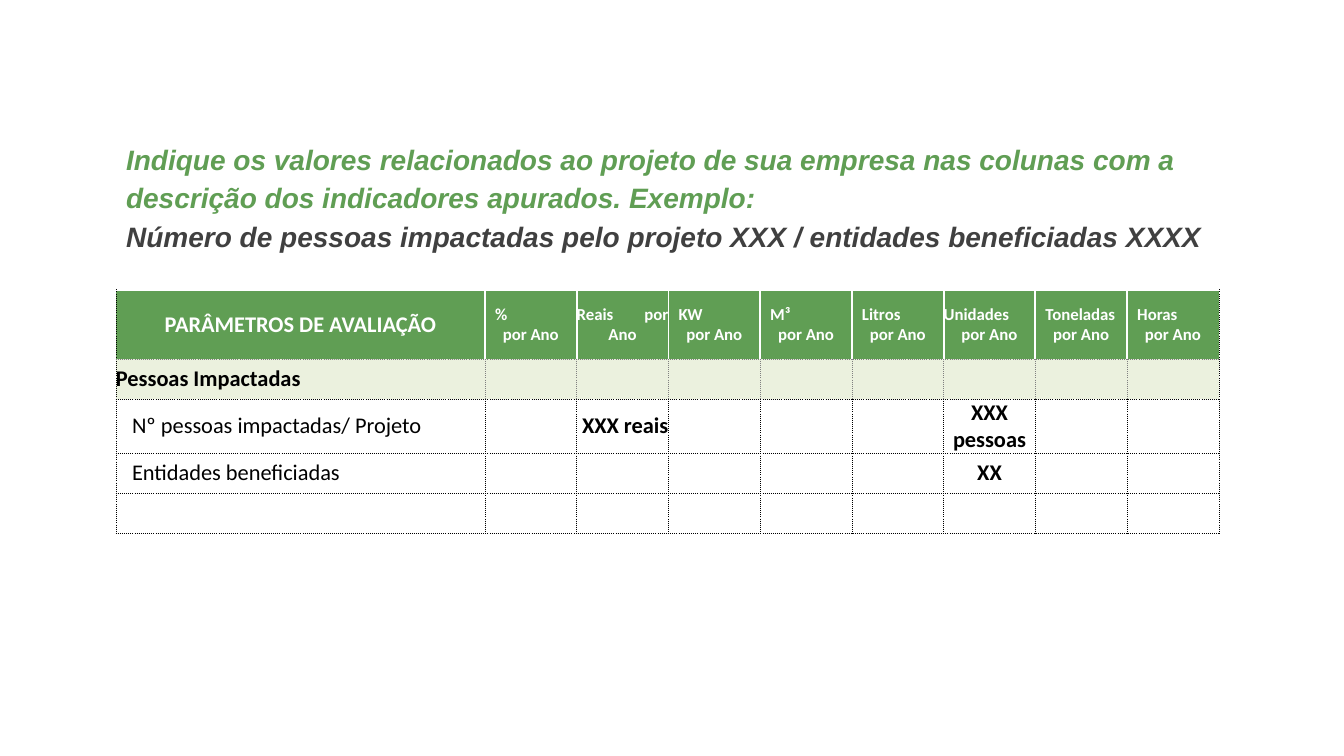
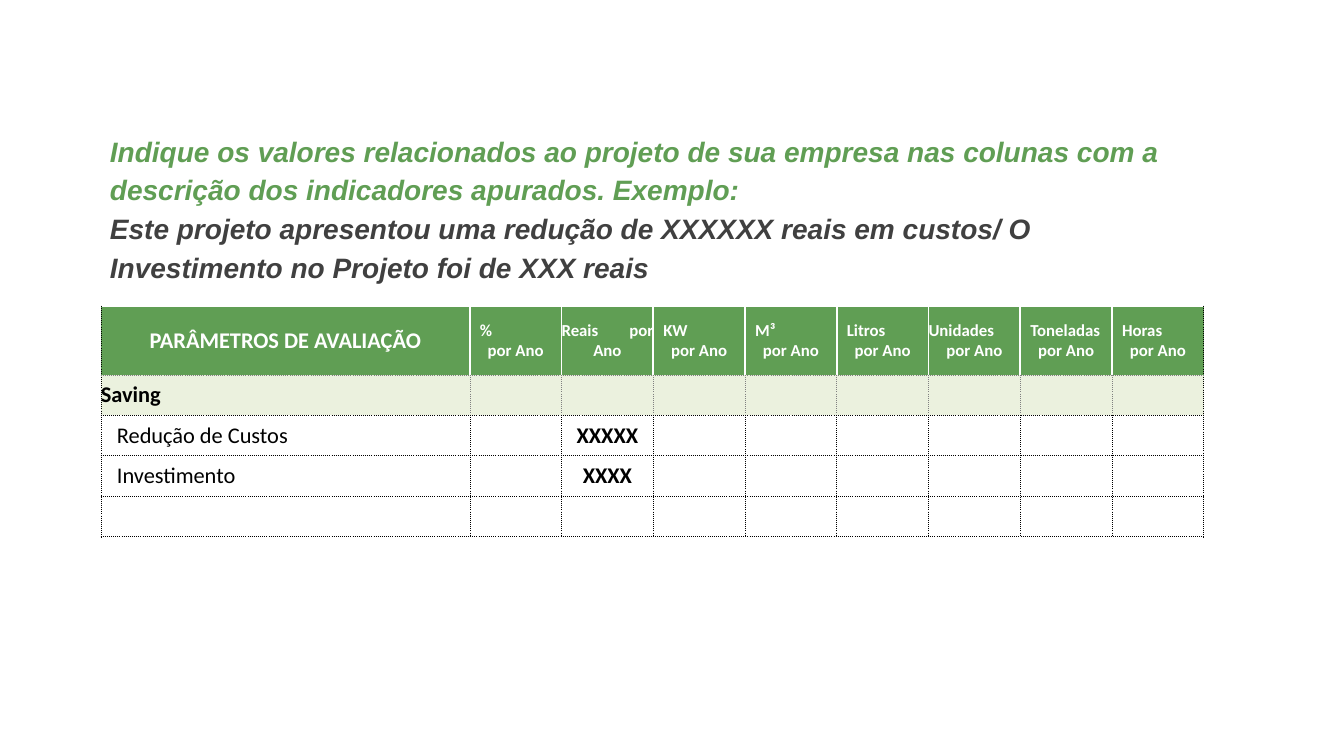
from pptx import Presentation
from pptx.dml.color import RGBColor
from pptx.enum.text import MSO_ANCHOR as Anchor, MSO_AUTO_SIZE as AutoSize, PP_ALIGN as Align
from pptx.oxml import parse_xml
from pptx.oxml.ns import nsdecls
from pptx.util import Inches, Pt

GREEN, PALE, WHITE = "609E54", "EBF1DE", "FFFFFF"
BLACK, GREY, CHARCOAL = "000000", "808080", "404040"

LABEL_WIDTH, UNIT_WIDTH = 3.66, 0.91
HEADER_HEIGHT, ROW_HEIGHT = 0.68, 0.4
UNIT_INDENT, LABEL_INDENT = 0.1, 0.16

PROMPT = ("Indique os valores relacionados ao projeto de sua empresa nas colunas "
          "com a descrição dos indicadores apurados. Exemplo:")
LABEL_HEADING = "PARÂMETROS DE AVALIAÇÃO"
# Unit line, second line, indent of the unit line
UNITS = [
    ("%", "por Ano", UNIT_INDENT),
    ("Reais\tpor", "Ano", 0),
    ("KW", "por Ano", UNIT_INDENT),
    ("M³", "por Ano", UNIT_INDENT),
    ("Litros", "por Ano", UNIT_INDENT),
    ("Unidades", "por Ano", 0),
    ("Toneladas", "por Ano", UNIT_INDENT),
    ("Horas", "por Ano", UNIT_INDENT),
]
REAIS, UNIDADES = 2, 6  # table columns that hold example values
LAST_COLUMN = len(UNITS)

HEADING = {"name": "Arial", "size": Pt(20), "bold": True, "italic": True}
CELL = {"name": "Calibri", "size": Pt(16), "bold": True}
UNIT = {**CELL, "size": Pt(12)}
PLAIN = {**CELL, "bold": False}

SOLID_WHITE = (WHITE, 1.5, "solid")
DOTTED_GREY = (GREY, 0.5, "dot")
DOTTED_BLACK = (BLACK, 0.5, "dot")


def color(hex_value):
    return RGBColor.from_string(hex_value)


def border_for(row, column, side):
    """Return colour, width and dash for one side (L, R, T or B) of a cell."""
    if (side, column) in (("L", 0), ("R", LAST_COLUMN)) or row > 1:
        return DOTTED_BLACK
    if row == 0:
        return DOTTED_GREY if side == "B" else SOLID_WHITE
    return DOTTED_BLACK if side == "B" else DOTTED_GREY


class IndicatorDeck:
    def __init__(self):
        self.deck = Presentation()
        self.deck.slide_width, self.deck.slide_height = Inches(13.33), Inches(7.5)
        self.page = None

    def new_page(self):
        self.page = self.deck.slides.add_slide(self.deck.slide_layouts[5])

    def add_text(self, para, text, font_format, hex_value, align=Align.LEFT):
        para.alignment = align
        span = para.add_run()
        span.text = text
        for name, value in font_format.items():
            setattr(span.font, name, value)
        span.font.color.rgb = color(hex_value)

    def heading(self, left, top, width, height, example):
        box = self.page.shapes.title
        box.left, box.top = Inches(left), Inches(top)
        box.width, box.height = Inches(width), Inches(height)
        frame = box.text_frame
        frame.word_wrap = True
        frame.auto_size = AutoSize.SHAPE_TO_FIT_TEXT
        frame.vertical_anchor = Anchor.TOP
        paras = [frame.paragraphs[0], frame.add_paragraph()]
        for para, text, hex_value in zip(paras, (PROMPT, example), (GREEN, CHARCOAL)):
            para.line_spacing = 1.15
            self.add_text(para, text, HEADING, hex_value)

    def style_cell(self, cell, row, column):
        layout = {"margin_left": 0, "margin_right": 0, "margin_top": 0,
                  "margin_bottom": 0, "vertical_anchor": Anchor.MIDDLE}
        for name, value in layout.items():
            setattr(cell, name, value)
        properties = cell._tc.get_or_add_tcPr()
        for side in "LRTB":
            hex_value, width, dash = border_for(row, column, side)
            properties.append(parse_xml(
                f'<a:ln{side} {nsdecls("a")} w="{Pt(width)}"><a:solidFill>'
                f'<a:srgbClr val="{hex_value}"/></a:solidFill>'
                f'<a:prstDash val="{dash}"/></a:ln{side}>'))
        cell.fill.solid()
        cell.fill.fore_color.rgb = color({0: GREEN, 1: PALE}.get(row, WHITE))

    def unit_heading(self, cell, unit, period, indent):
        """Put the unit at the left, with a right tab at the cell edge, and the period centred."""
        first = cell.text_frame.paragraphs[0]
        properties = first._p.get_or_add_pPr()
        properties.set("marL", str(Inches(indent)))
        properties.append(parse_xml(
            f'<a:tabLst {nsdecls("a")}><a:tab pos="{Inches(UNIT_WIDTH)}" algn="r"/></a:tabLst>'))
        self.add_text(first, unit, UNIT, WHITE)
        self.add_text(cell.text_frame.add_paragraph(), period, UNIT, WHITE, Align.CENTER)

    def indicator_table(self, left, top, labels, values):
        """Draw the table; values maps (row, column) to text and alignment."""
        row_count = len(labels) + 2
        table = self.page.shapes.add_table(
            row_count, LAST_COLUMN + 1, Inches(left), Inches(top),
            Inches(LABEL_WIDTH + UNIT_WIDTH * LAST_COLUMN),
            Inches(HEADER_HEIGHT + ROW_HEIGHT * (row_count - 1))).table
        table.first_row = table.horz_banding = False
        for column, line in enumerate(table.columns):
            line.width = Inches(UNIT_WIDTH if column else LABEL_WIDTH)
        for row, line in enumerate(table.rows):
            line.height = Inches(ROW_HEIGHT if row else HEADER_HEIGHT)
            for column, cell in enumerate(line.cells):
                self.style_cell(cell, row, column)

        self.add_text(table.cell(0, 0).text_frame.paragraphs[0], LABEL_HEADING,
                      CELL, WHITE, Align.CENTER)
        for column, unit in enumerate(UNITS, 1):
            self.unit_heading(table.cell(0, column), *unit)
        for row, label in enumerate(labels, 1):
            cell = table.cell(row, 0)
            cell.margin_left = Inches(LABEL_INDENT if row > 1 else 0)
            self.add_text(cell.text_frame.paragraphs[0], label,
                          PLAIN if row > 1 else CELL, BLACK)
        for position, (text, align) in values.items():
            para = table.cell(*position).text_frame.paragraphs[0]
            self.add_text(para, text, CELL, BLACK, align)


def main():
    show = IndicatorDeck()

    show.new_page()
    show.heading(1.15, 1.31, 10.95, 1.26,
                 "Número de pessoas impactadas pelo projeto XXX / entidades beneficiadas XXXX")
    show.indicator_table(
        1.15, 2.88,
        ["Pessoas Impactadas", "Nº pessoas impactadas/ Projeto", "Entidades beneficiadas"],
        {(2, REAIS): ("XXX reais", Align.RIGHT),
         (2, UNIDADES): ("XXX pessoas", Align.CENTER),
         (3, UNIDADES): ("XX", Align.CENTER)})

    show.new_page()
    show.heading(0.99, 1.23, 10.79, 1.65,
                 "Este projeto apresentou uma redução de XXXXXX reais em custos/ O "
                 "Investimento no Projeto foi de XXX reais")
    show.indicator_table(
        1, 3.04,
        ["Saving", "Redução de Custos", "Investimento"],
        {(2, REAIS): ("XXXXX", Align.CENTER),
         (3, REAIS): ("XXXX", Align.CENTER)})

    show.deck.save("out.pptx")


if __name__ == "__main__":
    main()
